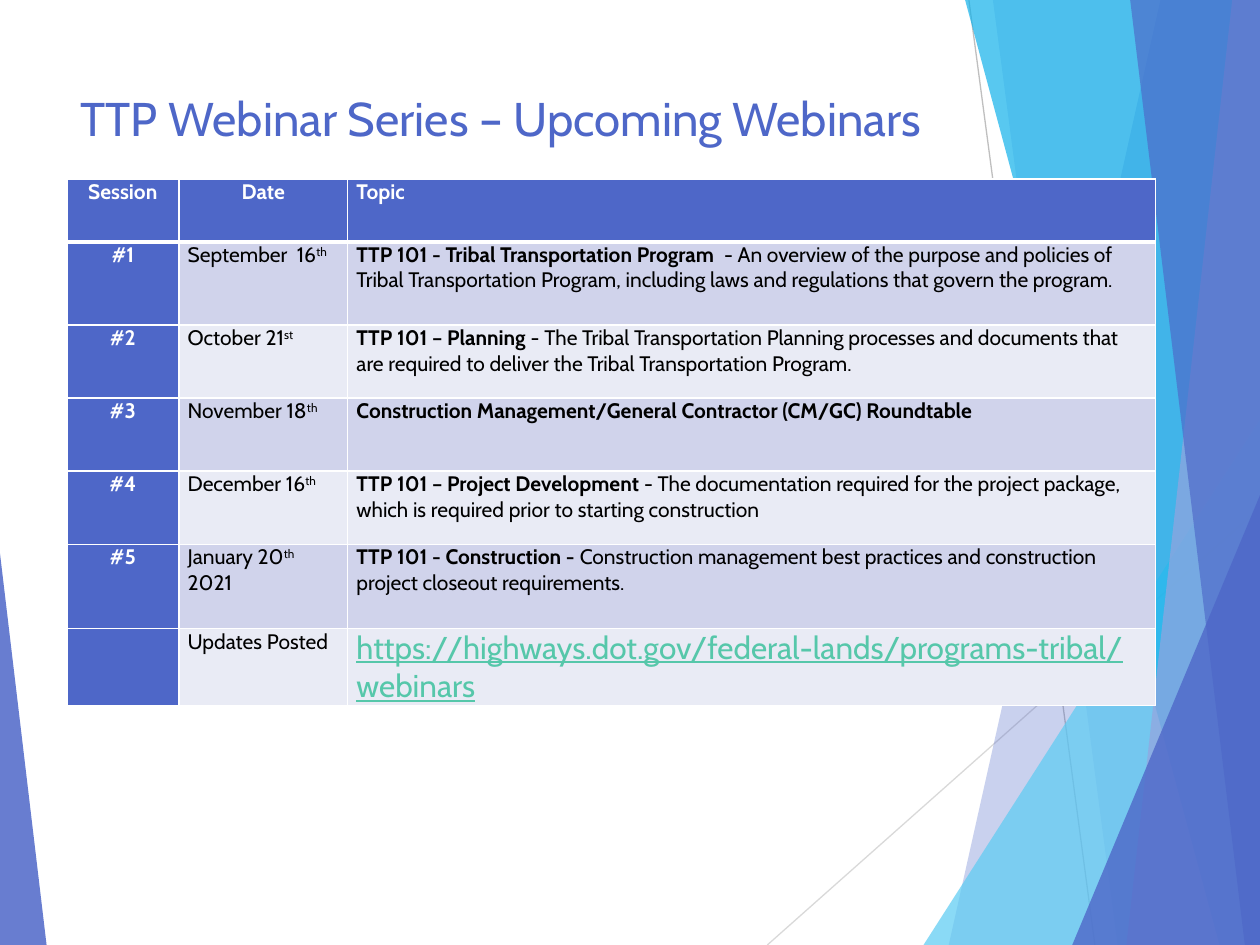
from lxml import etree
from pptx import Presentation
from pptx.dml.color import RGBColor
from pptx.enum.shapes import MSO_CONNECTOR, MSO_SHAPE
from pptx.enum.text import MSO_ANCHOR, PP_ALIGN
from pptx.oxml.ns import qn
from pptx.util import Inches, Pt

STRAIGHT = MSO_CONNECTOR.STRAIGHT
TRIANGLE = MSO_SHAPE.ISOSCELES_TRIANGLE
TOP = MSO_ANCHOR.TOP
CENTER, LEFT = PP_ALIGN.CENTER, PP_ALIGN.LEFT

FONT = "Cabin"
BLUE, SKY, WHITE, BLACK, TEAL = "4E67C8", "5ECCF3", "FFFFFF", "000000", "56C7AA"
BANDS = ("D0D3EB", "E9EBF5")
PAGE_WIDTH, PAGE_HEIGHT = 10, 7.5

LINES = [((7.69, 0), (8.69, 7.5), "BFBFBF"), ((10, 4.03), (6.09, 7.5), "D9D9D9")]
BACK_SLABS = [(9.21, 7.53, BLUE, 30), (7.88, 8.87, BLUE, 20)]
FRONT_SLABS = [(7.66, 9.68, "12B2EB", 70), (9.78, 8.94, "95A4DE", 70), (8.97, 9.88, BLUE, 65)]

COLUMN_WIDTHS = (0.89, 1.34, 6.41)
ROW_HEIGHTS = (0.5, 0.66, 0.58, 0.58, 0.58, 0.67, 0.61)
HEADINGS = ("Session", "Date", "Topic")
SESSIONS = [
    ("#1", ("September  16", "th", ""), "TTP 101 - Tribal Transportation Program  ",
     "- An overview of the purpose and policies of Tribal Transportation Program, "
     "including laws and regulations that govern the program."),
    ("#2", ("October 21", "st", ""), "TTP 101 – Planning",
     " - The Tribal Transportation Planning processes and documents that are required "
     "to deliver the Tribal Transportation Program."),
    ("#3", ("November 18", "th", ""),
     "Construction Management/General Contractor (CM/GC) Roundtable", ""),
    ("#4", ("December 16", "th", ""), "TTP 101 – Project Development ",
     "- The documentation required for the project package, which is required prior "
     "to starting construction"),
    ("#5", ("January 20", "th", " 2021"), "TTP 101 - Construction - ",
     "Construction management best practices and construction project closeout requirements."),
]
UPDATES_ADDRESS = "https://highways.dot.gov/federal-lands/programs-tribal/webinars"


def paint(fill, color, opacity=100):
    """Fill with a solid colour at an opacity in percent."""
    fill.solid()
    fill.fore_color.rgb = RGBColor.from_string(color)
    if opacity < 100:
        color_node = fill._xPr.find(qn("a:solidFill"))[0]
        etree.SubElement(color_node, qn("a:alpha"), val=str(opacity * 1000))


def finish_shape(shape, color, opacity):
    """Give a decorative shape its fill, without outline or shadow."""
    shape.shadow.inherit = False
    shape.line.fill.background()
    paint(shape.fill, color, opacity)


def add_line(page, start, end, color):
    """Draw a thin straight line."""
    line = page.shapes.add_connector(STRAIGHT, *map(Inches, start + end))
    line.line.color.rgb = RGBColor.from_string(color)
    line.line.width = Pt(0.75)
    etree.SubElement(line._element.spPr, qn("a:effectLst"))


def add_slab(page, top_left, bottom_left, color, opacity):
    """Draw a full-height slab that reaches the right page edge."""
    corners = [(top_left, 0), (PAGE_WIDTH, 0), (PAGE_WIDTH, PAGE_HEIGHT), (bottom_left, PAGE_HEIGHT)]
    points = [(Inches(x), Inches(y)) for x, y in corners]
    builder = page.shapes.build_freeform(*points[0])
    builder.add_line_segments(points[1:], close=True)
    finish_shape(builder.convert_to_shape(), color, opacity)


def add_triangle(page, left, width, height, apex, color, opacity):
    """Draw a right triangle that stands on the bottom page edge."""
    box = [Inches(v) for v in (left, PAGE_HEIGHT - height, width, height)]
    triangle = page.shapes.add_shape(TRIANGLE, *box)
    triangle.adjustments[0] = apex
    finish_shape(triangle, color, opacity)


def set_font(font, size, color, bold=None):
    """Set the font of a paragraph."""
    font.name = FONT
    font.size = Pt(size)
    font.color.rgb = RGBColor.from_string(color)
    font.bold = bold


def add_title(page, text):
    """Add the slide title."""
    box = page.shapes.add_textbox(Inches(0.56), Inches(0.67), Inches(7.28), Inches(1.44))
    frame = box.text_frame
    frame.word_wrap = True
    frame.vertical_anchor = TOP
    frame.margin_left = frame.margin_right = Inches(0.08)
    frame.margin_top = frame.margin_bottom = Inches(0.04)
    frame.text = text
    set_font(frame.paragraphs[0].font, 27, BLUE)


def set_borders(cell, bottom_width):
    """Draw white borders around a cell."""
    properties = cell._tc.get_or_add_tcPr()
    widths = (("a:lnL", 1), ("a:lnR", 1), ("a:lnT", 1), ("a:lnB", bottom_width))
    for position, (tag, width) in enumerate(widths):
        border = etree.Element(qn(tag), w=str(Pt(width)))
        solid = etree.SubElement(border, qn("a:solidFill"))
        etree.SubElement(solid, qn("a:srgbClr"), val=WHITE)
        properties.insert(position, border)


def fill_cell(cell, fill, color, spans, align=LEFT, size=12, bold=None, bottom_width=1):
    """Write text spans into a cell and return the runs."""
    cell.margin_left = cell.margin_right = Inches(0.07)
    cell.margin_top = cell.margin_bottom = 0
    paint(cell.fill, fill)
    set_borders(cell, bottom_width)
    para = cell.text_frame.paragraphs[0]
    para.alignment = align
    set_font(para.font, size, color, bold)
    runs = []
    for text in filter(None, spans):
        span = para.add_run()
        span.text = text
        runs.append(span)
    return runs


def add_schedule(page):
    """Add the table of webinar sessions."""
    box = [Inches(v) for v in (0.53, 1.42, sum(COLUMN_WIDTHS), sum(ROW_HEIGHTS))]
    table = page.shapes.add_table(len(ROW_HEIGHTS), len(COLUMN_WIDTHS), *box).table
    for column, width in zip(table.columns, COLUMN_WIDTHS):
        column.width = Inches(width)
    for row, height in zip(table.rows, ROW_HEIGHTS):
        row.height = Inches(height)

    for index, heading in enumerate(HEADINGS):
        align = LEFT if heading == "Topic" else CENTER
        fill_cell(table.cell(0, index), BLUE, WHITE, [heading], align, bold=True, bottom_width=3)

    for row, (number, date, topic, summary) in enumerate(SESSIONS, start=1):
        band = BANDS[(row - 1) % 2]
        fill_cell(table.cell(row, 0), BLUE, WHITE, [number], CENTER, bold=True)
        date_runs = fill_cell(table.cell(row, 1), band, BLACK, date)
        date_runs[1].font._element.set("baseline", "30000")
        topic_runs = fill_cell(table.cell(row, 2), band, BLACK, [topic, summary])
        topic_runs[0].font.bold = True

    last = len(ROW_HEIGHTS) - 1
    fill_cell(table.cell(last, 0), BLUE, WHITE, [])
    fill_cell(table.cell(last, 1), BANDS[1], BLACK, ["Updates Posted"])
    address = fill_cell(table.cell(last, 2), BANDS[1], TEAL, [UPDATES_ADDRESS], size=18)
    address[0].font.underline = True


def main():
    """Build the webinar schedule slide."""
    deck = Presentation()
    deck.slide_width, deck.slide_height = Inches(PAGE_WIDTH), Inches(PAGE_HEIGHT)
    page = deck.slides.add_slide(deck.slide_layouts[6])
    for line in LINES:
        add_line(page, *line)
    for slab in BACK_SLABS:
        add_slab(page, *slab)
    add_triangle(page, 7.33, 2.67, 4.17, 1, SKY, 72)
    for slab in FRONT_SLABS:
        add_slab(page, *slab)
    add_triangle(page, 8.51, 1.49, 3.57, 1, BLUE, 80)
    add_triangle(page, 0, 0.37, 3.11, 0, BLUE, 85)
    add_title(page, "TTP Webinar Series – Upcoming Webinars")
    add_schedule(page)
    deck.save("out.pptx")


if __name__ == "__main__":
    main()
